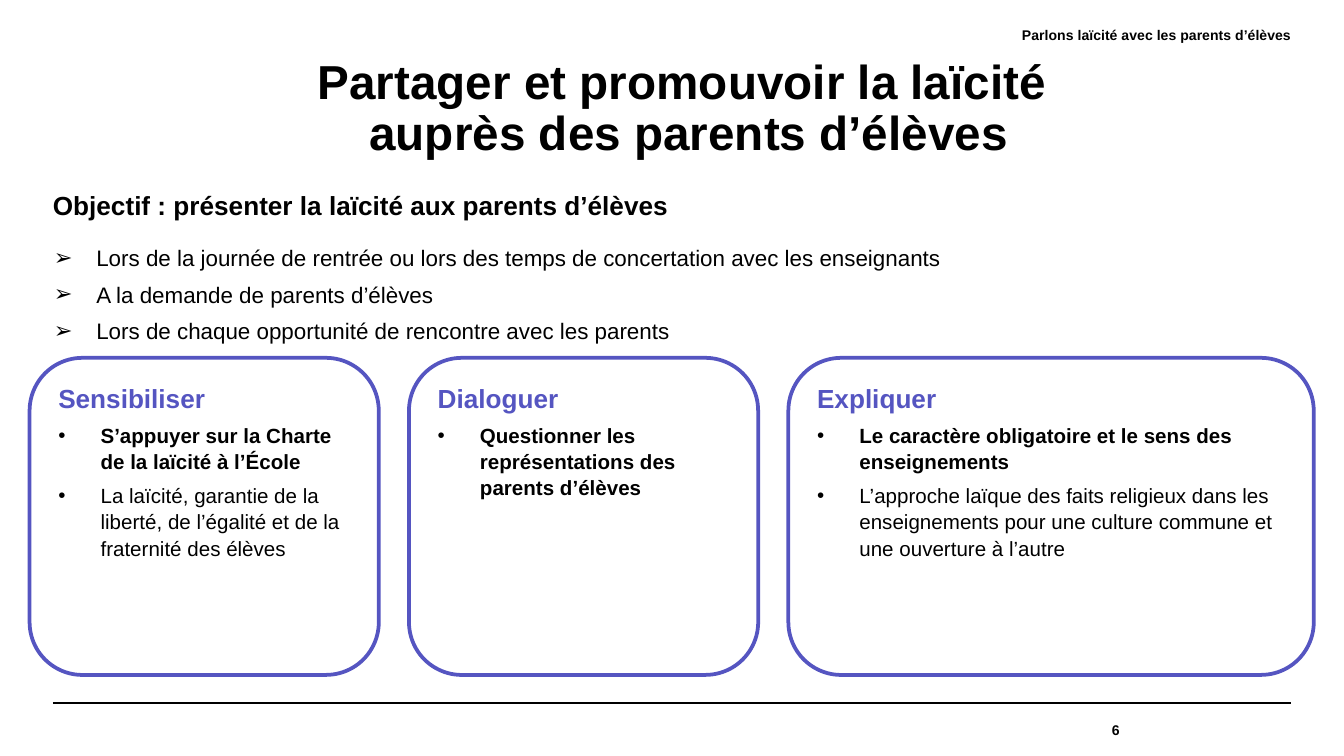
"""Build the slide on sharing laïcité with pupils' parents."""
from lxml.etree import SubElement
from pptx import Presentation
from pptx.dml.color import RGBColor
from pptx.enum.shapes import MSO_CONNECTOR, MSO_SHAPE
from pptx.enum.text import MSO_ANCHOR, MSO_AUTO_SIZE, PP_ALIGN
from pptx.oxml.ns import qn
from pptx.util import Cm, Pt

BLACK = RGBColor(0x00, 0x00, 0x00)
WHITE = RGBColor(0xFF, 0xFF, 0xFF)
VIOLET = RGBColor(0x55, 0x55, 0xC1)
FRAME = {"word_wrap": True, "auto_size": MSO_AUTO_SIZE.NONE,
         "vertical_anchor": MSO_ANCHOR.TOP}
NO_MARGINS = {"margin_left": 0, "margin_top": 0, "margin_right": 0, "margin_bottom": 0}


def write(paragraph, text, size, bold=False, color=BLACK, bullet=None, **layout):
    paragraph.text = text
    if bullet:
        properties = paragraph._p.get_or_add_pPr()
        properties.set("marL", str(Cm(0.8)))
        properties.set("indent", str(Cm(-0.8)))
        SubElement(properties, qn("a:buFont")).set("typeface", "Arial")
        SubElement(properties, qn("a:buChar")).set("char", bullet)
    for name, value in layout.items():
        setattr(paragraph, name, value)
    for run in paragraph.runs:
        for name, value in {"name": "Arial", "size": Pt(size), "bold": bold}.items():
            setattr(run.font, name, value)
        run.font.color.rgb = color


def place(shape, left, top, width, height, **settings):
    box = {"left": left, "top": top, "width": width, "height": height}
    for name, value in box.items():
        setattr(shape, name, Cm(value))
    for name, value in {**FRAME, **settings}.items():
        setattr(shape.text_frame, name, value)
    return shape.text_frame


presentation = Presentation()
presentation.slide_width = Cm(25.4)
presentation.slide_height = Cm(14.28)
slide = presentation.slides.add_slide(presentation.slide_layouts[1])
shapes = slide.shapes

footer_rule = shapes.add_connector(
    MSO_CONNECTOR.STRAIGHT, Cm(1), Cm(13.28), Cm(24.4), Cm(13.28))
footer_rule.line.color.rgb = BLACK
footer_rule.line.width = Pt(0.8)
SubElement(footer_rule._element.spPr, qn("a:effectLst"))

title = place(shapes.title, 1.32, 1.07, 23.4, 2,
              **{**NO_MARGINS, "vertical_anchor": MSO_ANCHOR.MIDDLE})
write(title.paragraphs[0], "Partager et promouvoir la laïcité \vauprès des parents d’élèves",
      25.5, bold=True, alignment=PP_ALIGN.CENTER, line_spacing=0.9)

LABELS = [
    ("Parlons laïcité avec les parents d’élèves", 7.5, (9.2, 0.5, 15.2, 1),
     PP_ALIGN.RIGHT, MSO_ANCHOR.TOP),
    ("Objectif : présenter la laïcité aux parents d’élèves", 14, (1, 3.58, 23.77, 1.14),
     PP_ALIGN.LEFT, MSO_ANCHOR.TOP),
    ("6", 7.5, (17.4, 13.28, 3.76, 1), PP_ALIGN.RIGHT, MSO_ANCHOR.MIDDLE),
]
for text, size, box, alignment, anchor in LABELS:
    label = place(shapes.add_textbox(0, 0, 0, 0), *box,
                  **{**NO_MARGINS, "vertical_anchor": anchor})
    write(label.paragraphs[0], text, size, bold=True, alignment=alignment)

OCCASIONS = [
    "Lors de la journée de rentrée ou lors des temps de concertation avec les enseignants",
    "A la demande de parents d’élèves",
    "Lors de chaque opportunité de rencontre avec les parents",
]
occasions = place(slide.placeholders[1], 1.02, 4.62, 22.48, 2, **NO_MARGINS)
for index, occasion in enumerate(OCCASIONS):
    paragraph = occasions.add_paragraph() if index else occasions.paragraphs[0]
    write(paragraph, occasion, 12, bullet="➢", alignment=PP_ALIGN.JUSTIFY,
          space_before=Pt(0), space_after=Pt(5))

ACTIONS = [
    ("Sensibiliser", 6.6, [
        "S’appuyer sur la Charte de la laïcité à l’École",
        "La laïcité, garantie de la liberté, de l’égalité et de la fraternité des élèves"]),
    ("Dialoguer", 6.6, ["Questionner les représentations des parents d’élèves"]),
    ("Expliquer", 9.93, [
        "Le caractère obligatoire et le sens des enseignements",
        "L’approche laïque des faits religieux dans les enseignements pour une culture "
        "commune et une ouverture à l’autre"]),
]
CARD_TEXT = {"alignment": PP_ALIGN.LEFT, "line_spacing": 1.07, "space_after": Pt(4)}
GAP = 0.57
left = 0.56
for heading, width, points in ACTIONS:
    card = shapes.add_shape(MSO_SHAPE.ROUNDED_RECTANGLE, 0, 0, 0, 0)
    card.shadow.inherit = False
    card.fill.solid()
    card.fill.fore_color.rgb = WHITE
    card.line.color.rgb = VIOLET
    card.line.width = Pt(2)
    content = place(card, left, 6.76, width, 5.99)
    write(content.paragraphs[0], heading, 14, bold=True, color=VIOLET, **CARD_TEXT)
    for index, point in enumerate(points):
        write(content.add_paragraph(), point, 11, bold=index == 0, bullet="•", **CARD_TEXT)
    left += width + GAP

presentation.save("out.pptx")
